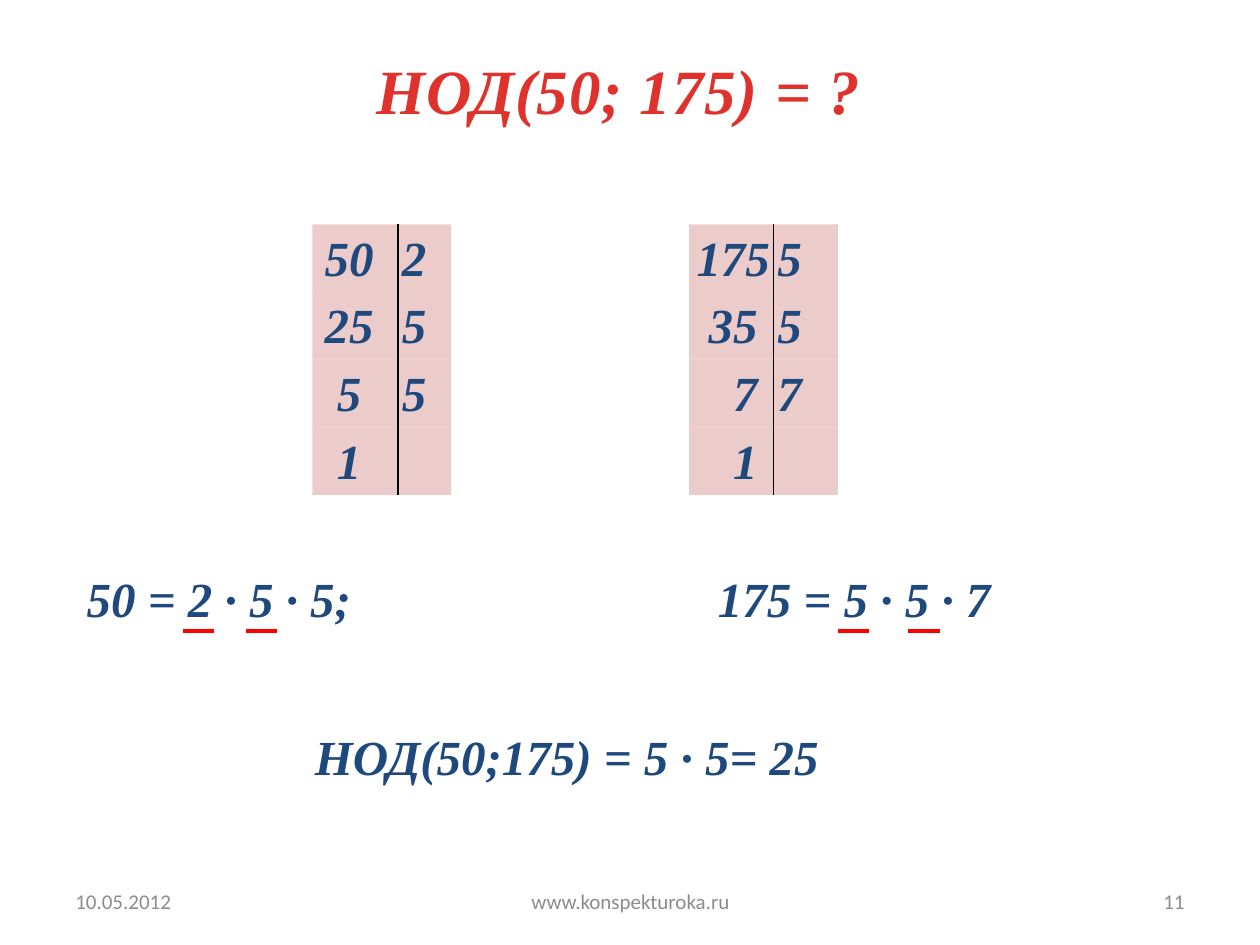
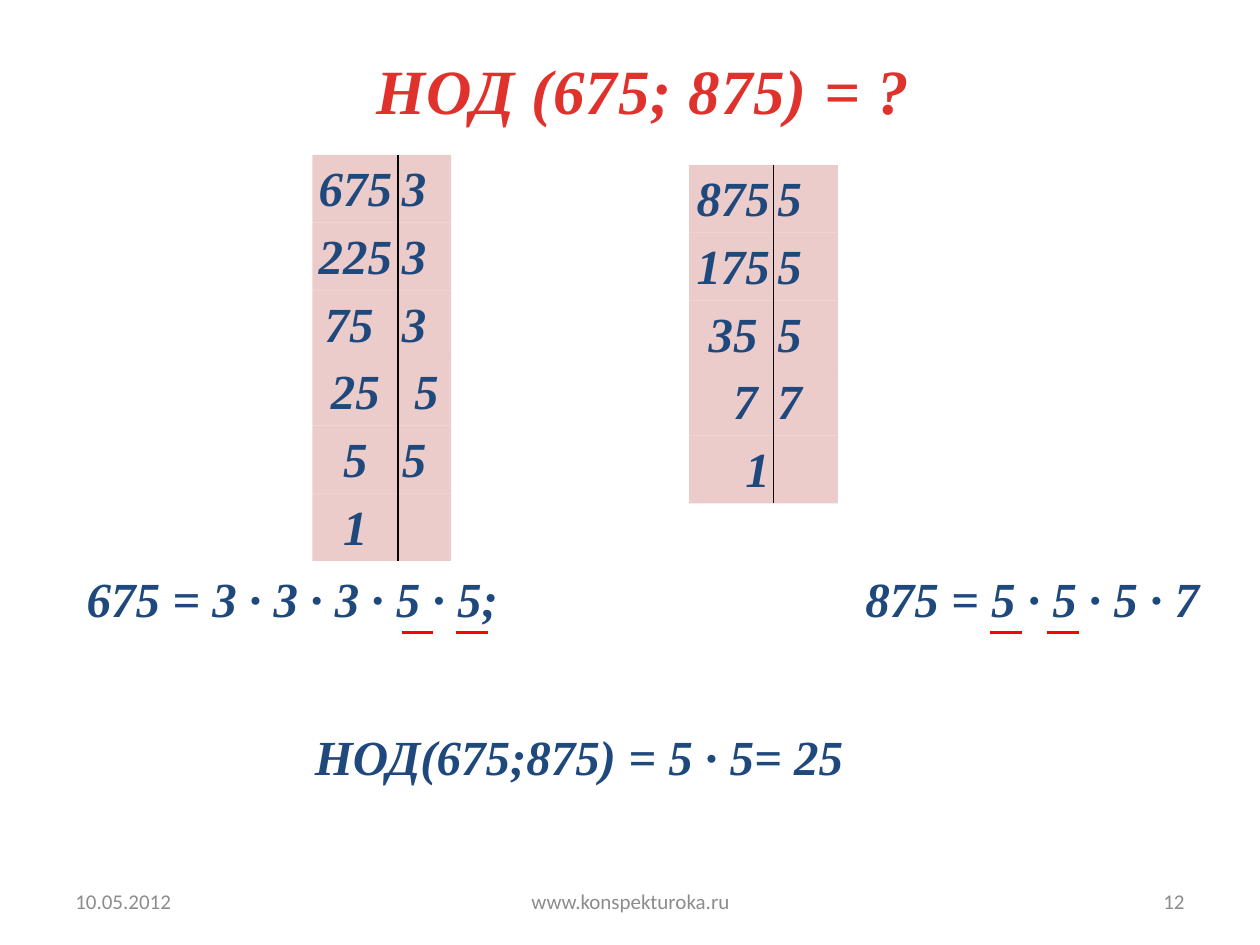
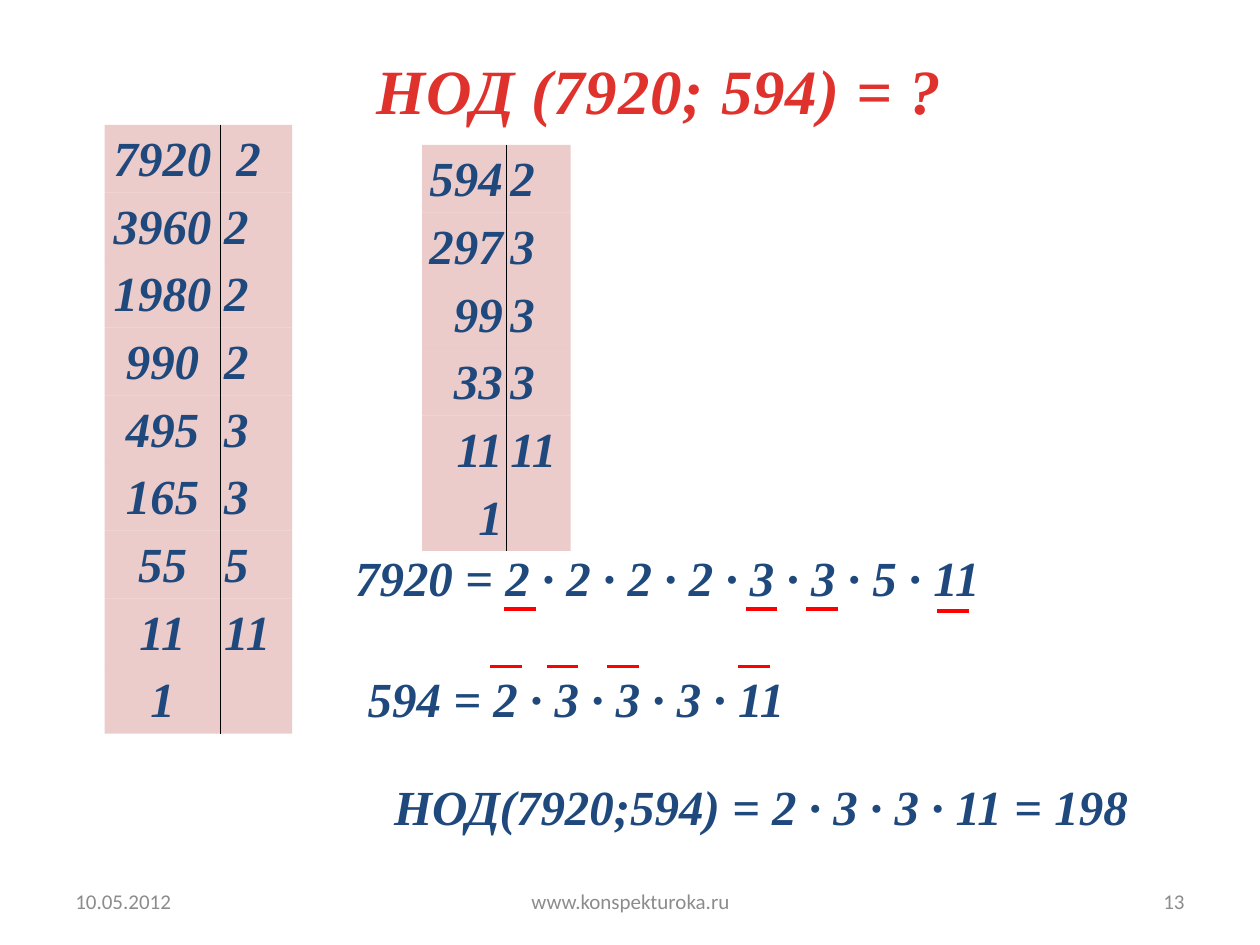
from dataclasses import dataclass

from lxml import etree
from pptx import Presentation
from pptx.dml.color import RGBColor
from pptx.enum.shapes import MSO_CONNECTOR
from pptx.enum.text import MSO_ANCHOR, MSO_AUTO_SIZE, PP_ALIGN
from pptx.oxml import parse_xml
from pptx.oxml.ns import nsdecls, qn
from pptx.util import Inches, Pt

LEFT, CENTER, RIGHT = PP_ALIGN.LEFT, PP_ALIGN.CENTER, PP_ALIGN.RIGHT
MIDDLE = MSO_ANCHOR.MIDDLE
FIT_SHAPE = MSO_AUTO_SIZE.SHAPE_TO_FIT_TEXT
STRAIGHT = MSO_CONNECTOR.STRAIGHT
NO_TABLE_STYLE = "{2D5ABB26-0587-4C30-8999-92F81FD0307C}"


@dataclass(frozen=True)
class Theme:
    math_font: str = "Times New Roman"
    footer_font: str = "Calibri"
    title_size: int = 36
    math_size: int = 28
    footer_size: int = 12
    title_top: str = "E0322D"
    title_bottom: str = "A2201C"
    math: str = "1F497D"
    footer: str = "8C8C8C"
    cell: str = "E6B9B8"
    rule: str = "000000"
    mark: str = "FF0000"


class Deck:
    def __init__(self, theme):
        self.theme = theme
        self.prs = Presentation()
        self.prs.slide_width, self.prs.slide_height = Inches(10), Inches(7.5)
        self.s = None

    def add_slide(self, title, title_width, number):
        self.s = self.prs.slides.add_slide(self.prs.slide_layouts[6])
        self.footer(0.5, 2.33, "10.05.2012", LEFT)
        self.footer(3.42, 3.17, "www.konspekturoka.ru", CENTER)
        self.footer(7.17, 2.33, str(number), RIGHT)
        self.title(title, title_width)

    def box(self, left, top, width, height, wrap=True):
        tf = self.s.shapes.add_textbox(
            Inches(left), Inches(top), Inches(width), Inches(height)).text_frame
        tf.word_wrap = wrap
        return tf

    def footer(self, left, width, text, align):
        t = self.theme
        tf = self.box(left, 6.95, width, 0.4)
        tf.vertical_anchor = MIDDLE
        p = tf.paragraphs[0]
        p.text, p.alignment = text, align
        p.font.name, p.font.size = t.footer_font, Pt(t.footer_size)
        p.font.color.rgb = RGBColor.from_string(t.footer)

    def title(self, text, width):
        t = self.theme
        tf = self.box(2.89, 0.36, width, 0.71, wrap=False)
        tf.auto_size = FIT_SHAPE
        p = tf.paragraphs[0]
        self.math_font(p, t.title_size)
        r = p.add_run()
        r.text = text
        fill = r.font.fill
        fill.gradient()
        fill.gradient_angle = 270
        for stop, position, color in zip(fill.gradient_stops, (0.25, 1),
                                         (t.title_top, t.title_bottom)):
            stop.position = position
            stop.color.rgb = RGBColor.from_string(color)
        r._r.get_or_add_rPr().set("spc", "50")

    def math_font(self, p, size=None):
        t = self.theme
        p.font.name, p.font.size = t.math_font, Pt(size or t.math_size)
        p.font.bold = p.font.italic = True
        p.font.color.rgb = RGBColor.from_string(t.math)

    def equations(self, left, top, width, text, tab=None, wrap=True):
        """Write one equation line; a tab stop places the second equation."""
        tf = self.box(left, top, width, 0.57, wrap)
        tf.auto_size = FIT_SHAPE
        p = tf.paragraphs[0]
        p.text = text
        if tab:
            tabs = etree.SubElement(p._p.get_or_add_pPr(), qn("a:tabLst"))
            etree.SubElement(tabs, qn("a:tab"), pos=str(Inches(tab)), algn="l")
        self.math_font(p)
        return tf

    def answer(self, left, top, width, text):
        self.equations(left, top, width, text, wrap=False)

    def factor_table(self, left, top, widths, align, rows):
        """Divide a number step by step: quotients left, prime divisors right."""
        row_height = Inches(0.53)
        table = self.s.shapes.add_table(
            len(rows), 2, Inches(left), Inches(top),
            Inches(sum(widths)), row_height * len(rows)).table
        table.first_row = table.horz_banding = False
        table._tbl.tblPr.find(qn("a:tableStyleId")).text = NO_TABLE_STYLE
        for column, width in zip(table.columns, widths):
            column.width = Inches(width)
        for i, row in enumerate(rows):
            table.rows[i].height = row_height
            for j, (text, side) in enumerate(zip(row, (align, LEFT))):
                self.factor_cell(table.cell(i, j), text, side, "RL"[j])

    def factor_cell(self, cell, text, align, ruled_side):
        t = self.theme
        cell.margin_left = cell.margin_right = Inches(0.03)
        cell.margin_top = cell.margin_bottom = 0
        cell.fill.solid()
        cell.fill.fore_color.rgb = RGBColor.from_string(t.cell)
        tc_pr = cell._tc.get_or_add_tcPr()
        color = tc_pr.find(qn("a:solidFill")).find(qn("a:srgbClr"))
        etree.SubElement(color, qn("a:alpha"), val="72000")
        tc_pr.insert(0, parse_xml(
            f'<a:ln{ruled_side} {nsdecls("a")} w="{Pt(1)}"><a:solidFill>'
            f'<a:srgbClr val="{t.rule}"/></a:solidFill></a:ln{ruled_side}>'))
        p = cell.text_frame.paragraphs[0]
        p.text, p.alignment, p.line_spacing = text, align, 1.15
        self.math_font(p)

    def marks(self, y, *starts):
        """Draw the short strokes that mark common factors."""
        for x in starts:
            line = self.s.shapes.add_connector(
                STRAIGHT, Inches(x), Inches(y), Inches(x + 0.25), Inches(y))
            line.line.color.rgb = RGBColor.from_string(self.theme.mark)
            line.line.width = Pt(2.25)
            etree.SubElement(line._element.spPr, qn("a:effectLst"))


FIRST_COLUMNS = (0.68, 0.42)
SECOND_COLUMNS = (0.67, 0.51)


def gcd_50_175(deck):
    deck.add_slide("НОД(50; 175) = ?", 4.22, 11)
    deck.factor_table(2.48, 1.78, FIRST_COLUMNS, CENTER, [
        ("50 ", "2"), ("25 ", "5"), ("5 ", "5"), ("1 ", "")])
    deck.factor_table(5.47, 1.78, SECOND_COLUMNS, RIGHT, [
        ("175 ", "5"), ("35 ", "5"), ("7 ", "7"), ("1 ", "")])
    deck.equations(0.59, 4.46, 9.14, "50 = 2 ∙ 5 ∙ 5;\t175 = 5 ∙ 5 ∙ 7", tab=5.01)
    deck.marks(5.01, 1.45, 1.95, 6.65, 7.21)
    deck.answer(2.4, 5.72, 4.25, "НОД(50;175) = 5 ∙ 5= 25")


def gcd_675_875(deck):
    deck.add_slide("НОД (675; 875) = ?", 4.48, 12)
    deck.factor_table(2.48, 1.23, FIRST_COLUMNS, CENTER, [
        ("675 ", "3"), ("225 ", "3"), ("75 ", "3"),
        ("25", " 5"), ("5", "5"), ("1", "")])
    deck.factor_table(5.47, 1.31, SECOND_COLUMNS, RIGHT, [
        ("875 ", "5"), ("175 ", "5"), ("35 ", "5"), ("7 ", "7"), ("1", "")])
    deck.equations(0.59, 4.46, 9.14,
                   "675 = 3 ∙ 3 ∙ 3 · 5 · 5;\t875 = 5 · 5 ∙ 5 ∙ 7", tab=6.18)
    deck.marks(5.02, 3.19, 3.62, 7.86, 8.31)
    deck.answer(2.4, 5.72, 4.45, "НОД(675;875) = 5 ∙ 5= 25")


def gcd_7920_594(deck):
    deck.add_slide("НОД (7920; 594) = ?", 4.74, 13)
    deck.factor_table(0.83, 0.99, (0.92, 0.57), CENTER, [
        ("7920 ", " 2"), ("3960", "2"), ("1980", "2"), ("990", "2"),
        ("495", "3"), ("165", "3"), ("55", "5"), ("11", "11"), ("1", "")])
    deck.factor_table(3.35, 1.15, SECOND_COLUMNS, RIGHT, [
        ("594", "2"), ("297", "3"), ("99", "3"),
        ("33", "3"), ("11", "11"), ("1", "")])
    deck.answer(3.03, 6.11, 6.09, "НОД(7920;594) = 2 ∙ 3 ∙ 3 · 11 = 198")
    tf = deck.equations(2.72, 4.3, 5.71, "7920 = 2 ∙ 2 ∙ 2 · 2 · 3 · 3 · 5 · 11")
    p = tf.add_paragraph()
    p.text, p.space_before = "594 = 2 · 3 ∙ 3 ∙ 3 · 11", Pt(35)
    p._p.get_or_add_pPr().set("marL", str(Inches(0.1)))
    deck.math_font(p)
    deck.marks(4.83, 4, 5.92, 6.4)
    deck.marks(4.85, 7.44)
    deck.marks(5.29, 3.89, 4.34, 4.82, 5.86)


def main():
    deck = Deck(Theme())
    for build in (gcd_50_175, gcd_675_875, gcd_7920_594):
        build(deck)
    deck.prs.save("out.pptx")


if __name__ == "__main__":
    main()
